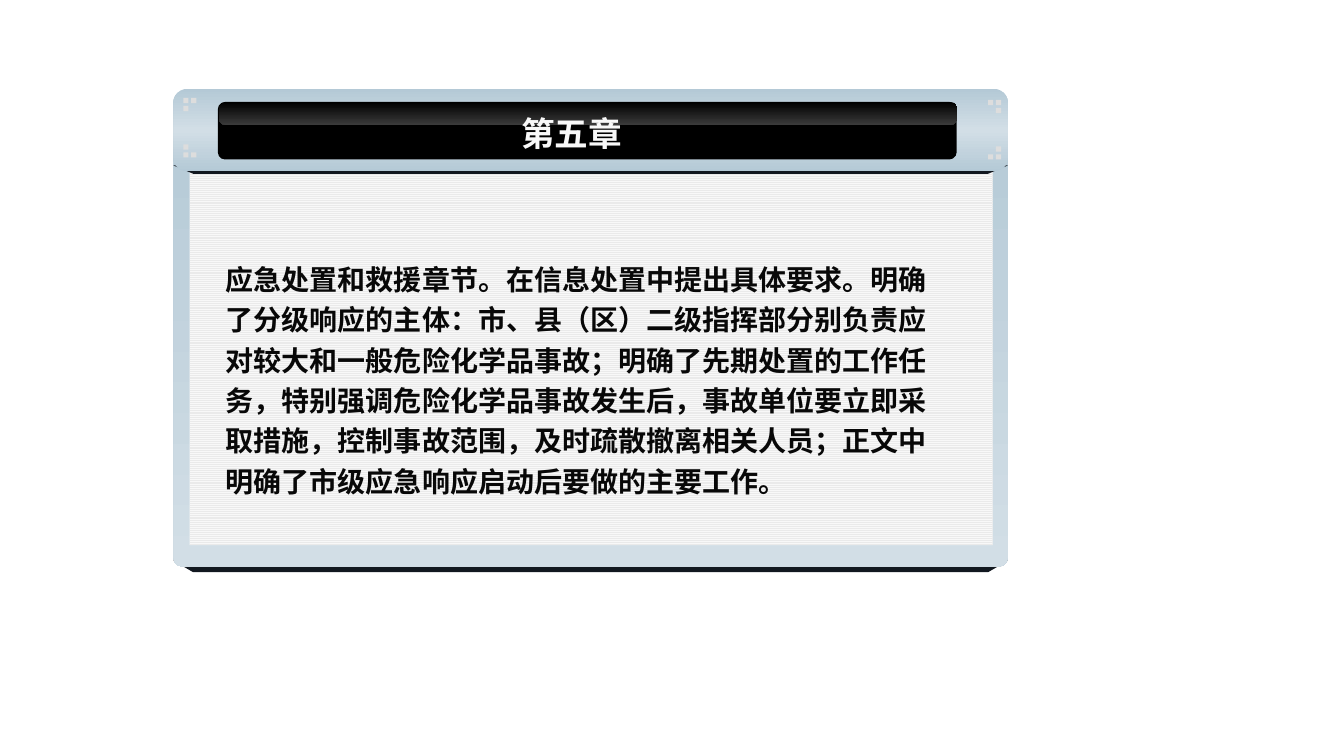
from copy import deepcopy

from pptx import Presentation
from pptx.dml.color import RGBColor
from pptx.enum.dml import MSO_PATTERN
from pptx.enum.shapes import MSO_SHAPE
from pptx.enum.text import MSO_ANCHOR, MSO_AUTO_SIZE, PP_ALIGN
from pptx.oxml.ns import qn
from pptx.util import Cm, Pt

RECT, ROUND = MSO_SHAPE.RECTANGLE, MSO_SHAPE.ROUNDED_RECTANGLE
LINES = MSO_PATTERN.LIGHT_HORIZONTAL
TOP = MSO_ANCHOR.TOP
FIT = MSO_AUTO_SIZE.SHAPE_TO_FIT_TEXT
LEFT, CENTER = PP_ALIGN.LEFT, PP_ALIGN.CENTER

STEEL = RGBColor(0xB4, 0xC9, 0xD6)
MIST = RGBColor(0xD2, 0xDE, 0xE6)
BLACK = RGBColor(0, 0, 0)
GLOSS = RGBColor(0x3A, 0x3A, 0x3A)
EDGE = RGBColor(0x12, 0x18, 0x20)
DOT = RGBColor(0xDD, 0xDD, 0xDD)
RULE = RGBColor(0xEA, 0xEA, 0xEA)
PAPER = RGBColor(0xF8, 0xF8, 0xF8)
INK = RGBColor(0x08, 0x08, 0x08)

TITLE = "第五章"
BODY = (
    "应急处置和救援章节。在信息处置中提出具体要求。明确了分级响应的主体："
    "市、县（区）二级指挥部分别负责应对较大和一般危险化学品事故；"
    "明确了先期处置的工作任务，特别强调危险化学品事故发生后，"
    "事故单位要立即采取措施，控制事故范围，及时疏散撤离相关人员；"
    "正文中明确了市级应急响应启动后要做的主要工作。"
)


def block(slide, kind, x, y, w, h, color=None, adj=None):
    """Add a borderless shape; lengths are in centimetres."""
    shape = slide.shapes.add_shape(kind, Cm(x), Cm(y), Cm(w), Cm(h))
    shape.shadow.inherit = False
    shape.line.fill.background()
    if color is not None:
        shape.fill.solid()
        shape.fill.fore_color.rgb = color
    if adj is not None:
        shape.adjustments[0] = adj
    return shape


def shade(shape, colors):
    """Fill from top to bottom with evenly spaced colours."""
    fill = shape.fill
    fill.gradient()
    fill.gradient_angle = 270
    stops = shape.element.spPr.find(".//" + qn("a:gsLst"))
    for _ in colors[2:]:
        stops.append(deepcopy(stops[0]))
    for i, (stop, color) in enumerate(zip(fill.gradient_stops, colors)):
        stop.position = i / (len(colors) - 1)
        stop.color.rgb = color


def lip(slide, x, y, w, drop):
    """Add the dark bevel that shows below a plate ending at y."""
    rise, inset = 0.15, 0.5
    pen = slide.shapes.build_freeform(Cm(x), Cm(y - rise))
    pen.add_line_segments([
        (Cm(x + inset), Cm(y + drop)),
        (Cm(x + w - inset), Cm(y + drop)),
        (Cm(x + w), Cm(y - rise)),
    ])
    shape = pen.convert_to_shape()
    shape.shadow.inherit = False
    shape.line.fill.background()
    shape.fill.solid()
    shape.fill.fore_color.rgb = EDGE


def write(shape, text, size, color, align):
    frame = shape.text_frame
    frame.word_wrap = True
    frame.auto_size = FIT
    frame.vertical_anchor = TOP
    frame.text = text
    para = frame.paragraphs[0]
    para.alignment = align
    font = para.runs[0].font
    font.name, font.size, font.bold = "Arial", Pt(size), True
    font.color.rgb = color
    return para


def panel(slide, x, y, w, h):
    # Frame and ruled paper
    lip(slide, x, y + h, w, 0.14)
    shade(block(slide, ROUND, x, y, w, h, adj=0.02), [STEEL, MIST])
    paper = block(slide, RECT, x + 0.41, y + 1.19, w - 0.79, h - 1.73)
    paper.fill.patterned()
    paper.fill.pattern = LINES
    paper.fill.fore_color.rgb = RULE
    paper.fill.back_color.rgb = PAPER

    # Body text
    box = slide.shapes.add_textbox(
        Cm(x + 1.07), Cm(y + 3.65), Cm(w - 2.36), Cm(6.4))
    write(box, BODY, 20, INK, LEFT).line_spacing = 1.2


def corner(slide, x, y, right, down):
    """Place three dots, the first at x, y and the others inward."""
    step = 0.2
    for dx, dy in ((0, 0), (right * step, 0), (0, down * step)):
        block(slide, RECT, x + dx, y + dy, 0.13, 0.13, DOT)


def header(slide, x, y, w, h):
    # Plate with dots in its corners
    lip(slide, x, y + h, w, 0.06)
    shade(block(slide, ROUND, x, y, w, h, adj=0.167), [STEEL, MIST, STEEL])
    for dx, right, shift in ((0.25, 1, 0), (w - 0.3, -1, 0.05)):
        for dy, down in ((0.23, 1), (1.6, -1)):
            corner(slide, x + dx, y + dy + shift, right, down)

    # Black bar with a glossy top
    block(slide, ROUND, x + 1.12, y + 0.33, w - 2.41, 1.45, BLACK, 0.127)
    gloss = block(slide, ROUND, x + 1.14, y + 0.33, w - 2.41, 0.58, adj=0.308)
    shade(gloss, [BLACK, GLOSS])

    # Title, brought in front of the bar
    title = slide.shapes.title
    title.left, title.top = Cm(x + 1.52), Cm(y + 0.48)
    title.width, title.height = Cm(w - 4.01), Cm(1.27)
    write(title, TITLE, 24, PAPER, CENTER)
    slide.shapes.element.append(title.element)


def main():
    prs = Presentation()
    prs.slide_width, prs.slide_height = Cm(33.87), Cm(19.05)
    slide = prs.slides.add_slide(prs.slide_layouts[5])
    panel(slide, 4.37, 2.67, 21.03, 11.61)
    header(slide, 4.37, 2.24, 21.03, 2.08)
    prs.save("out.pptx")


if __name__ == "__main__":
    main()
